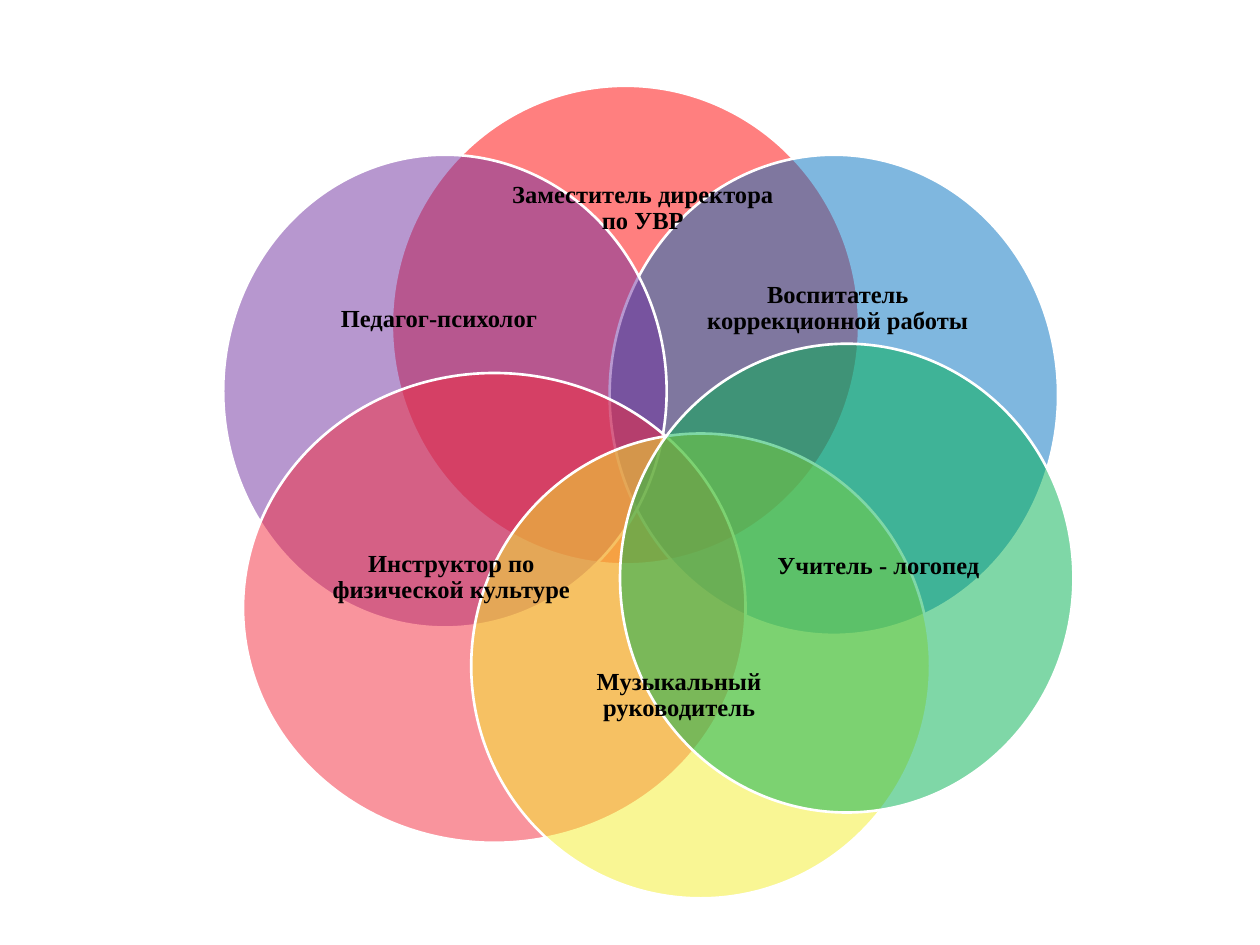
import pptx
import pptx.dml.color
import pptx.enum.shapes
import pptx.enum.text
import pptx.oxml.ns
import pptx.util
from lxml import etree
from pptx.dml.color import RGBColor
from pptx.util import Cm

RED = RGBColor(0xFF, 0x00, 0x00)
BLUE = RGBColor(0x00, 0x70, 0xC0)
PURPLE = RGBColor(0x70, 0x30, 0xA0)
CRIMSON = RGBColor(0xF4, 0x2A, 0x3D)
YELLOW = RGBColor(0xF4, 0xEF, 0x2A)
GREEN = RGBColor(0x00, 0xB0, 0x50)
WHITE = RGBColor(0xFF, 0xFF, 0xFF)
BLACK = RGBColor(0x00, 0x00, 0x00)


class VennSlide:
    font_name = "Times New Roman"
    font_size = pptx.util.Pt(14)
    outline_width = pptx.util.Pt(1.5)
    opacity = 50

    def __init__(self, slide):
        self.slide = slide

    def circle(self, left, top, width, height, color):
        """Add a translucent ellipse with a white outline."""
        shape = self.slide.shapes.add_shape(
            pptx.enum.shapes.MSO_SHAPE.OVAL,
            Cm(left), Cm(top), Cm(width), Cm(height))
        shape.shadow.inherit = False
        shape.fill.solid()
        shape.fill.fore_color.rgb = color
        color_element = shape.fill._xPr.find(".//" + pptx.oxml.ns.qn("a:srgbClr"))
        alpha = etree.SubElement(color_element, pptx.oxml.ns.qn("a:alpha"))
        alpha.set("val", str(self.opacity * 1000))
        shape.line.color.rgb = WHITE
        shape.line.width = self.outline_width

    def label(self, left, top, width, height, text, top_inset=None):
        """Add a centred label; a top inset anchors it to the top instead of the middle."""
        box = self.slide.shapes.add_textbox(Cm(left), Cm(top), Cm(width), Cm(height))
        frame = box.text_frame
        frame.word_wrap = True
        frame.margin_left = frame.margin_right = frame.margin_bottom = 0
        frame.margin_top = Cm(top_inset or 0)
        anchors = pptx.enum.text.MSO_ANCHOR
        frame.vertical_anchor = anchors.TOP if top_inset else anchors.MIDDLE
        paragraph = frame.paragraphs[0]
        paragraph.text = text
        paragraph.alignment = pptx.enum.text.PP_ALIGN.CENTER
        paragraph.line_spacing = 0.9
        font = paragraph.font
        font.name = self.font_name
        font.size = self.font_size
        font.bold = True
        font.color.rgb = BLACK


def main():
    presentation = pptx.Presentation()
    presentation.slide_width = Cm(25.4)
    presentation.slide_height = Cm(19.05)
    venn = VennSlide(presentation.slides.add_slide(presentation.slide_layouts[6]))

    # Upper circles
    venn.circle(7.9, 1.73, 9.42, 9.65, RED)
    venn.circle(12.29, 3.12, 9.04, 9.68, BLUE)
    venn.circle(4.5, 3.12, 8.94, 9.53, PURPLE)

    # Lower circles, stacked with the labels they overlap
    venn.circle(4.9, 7.52, 10.13, 9.47, CRIMSON)
    venn.label(5.69, 4.72, 6.32, 3.45, "Педагог-психолог")
    venn.circle(9.5, 8.74, 9.25, 9.37, YELLOW)
    venn.label(6.1, 9.53, 6, 4.22, "Инструктор по физической культуре")
    venn.circle(12.5, 6.93, 9.14, 9.45, GREEN)

    # Labels in front of all circles
    venn.label(13.89, 4.11, 6, 4.22, "Воспитатель коррекционной работы")
    venn.label(14.71, 9.53, 6, 3.78, "Учитель - логопед")
    venn.label(10.69, 12.73, 6, 4.22, "Музыкальный руководитель", top_inset=0.76)
    venn.label(10.31, 3.33, 5.3, 1.75, "Заместитель директора по УВР")

    presentation.save("out.pptx")


if __name__ == "__main__":
    main()
